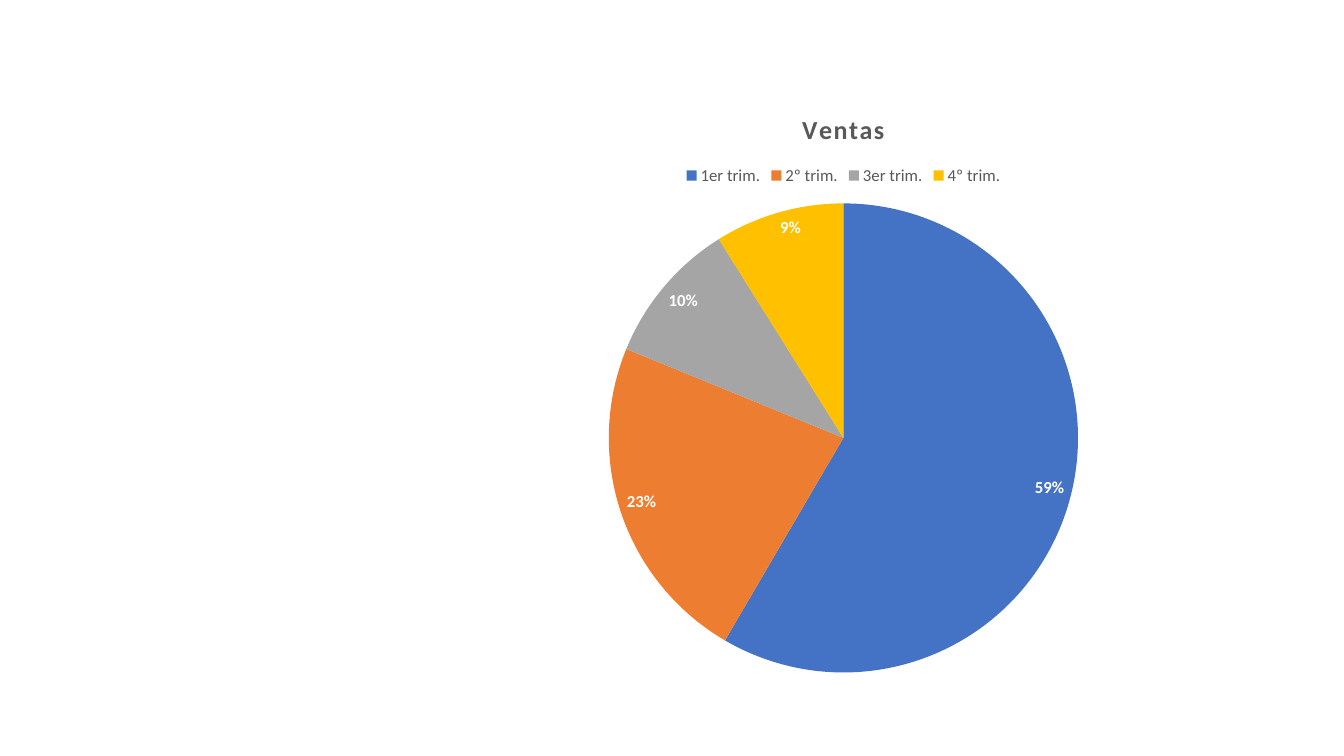
from pptx import Presentation
from pptx.chart.data import CategoryChartData
from pptx.dml.color import RGBColor
from pptx.enum.chart import XL_CHART_TYPE, XL_LABEL_POSITION, XL_LEGEND_POSITION
from pptx.util import Inches, Pt

GREY_TEXT = RGBColor(0x59, 0x59, 0x59)
WHITE = RGBColor(0xFF, 0xFF, 0xFF)
BLUE = RGBColor(0x44, 0x72, 0xC4)
ORANGE = RGBColor(0xED, 0x7D, 0x31)
GREY = RGBColor(0xA5, 0xA5, 0xA5)
YELLOW = RGBColor(0xFF, 0xC0, 0x00)

QUARTERS = [
    ("1er trim.", 59, BLUE),
    ("2º trim.", 23, ORANGE),
    ("3er trim.", 10, GREY),
    ("4º trim.", 9, YELLOW),
]


def style_font(font, size, color, bold=False):
    font.name = "Calibri"
    font.size = Pt(size)
    font.color.rgb = color
    font.bold = bold


def add_sales_pie(page, left, top, width, height):
    names, shares, colors = zip(*QUARTERS)
    sales = CategoryChartData()
    sales.categories = names
    sales.add_series("Ventas", shares)
    chart = page.shapes.add_chart(
        XL_CHART_TYPE.PIE, left, top, width, height, sales
    ).chart
    style_font(chart.font, 10, GREY_TEXT)

    chart.has_title = True
    chart.chart_title.include_in_layout = False
    title = chart.chart_title.text_frame.paragraphs[0]
    span = title.add_run()
    span.text = "Ventas"
    style_font(span.font, 18.6, GREY_TEXT, bold=True)
    span.font._element.set("spc", "100")

    chart.has_legend = True
    chart.legend.position = XL_LEGEND_POSITION.TOP
    chart.legend.include_in_layout = False
    style_font(chart.legend.font, 12, GREY_TEXT)

    pie = chart.plots[0]
    pie.vary_by_categories = True
    for index, color in enumerate(colors):
        fill = pie.series[0].points[index].format.fill
        fill.solid()
        fill.fore_color.rgb = color

    pie.has_data_labels = True
    labels = pie.data_labels
    labels.show_value = True
    labels.number_format = '0"%"'
    labels.number_format_is_linked = False
    labels.position = XL_LABEL_POSITION.INSIDE_END
    style_font(labels.font, 12, WHITE, bold=True)


def main():
    deck = Presentation()
    deck.slide_width = Inches(13.33)
    deck.slide_height = Inches(7.5)
    page = deck.slides.add_slide(deck.slide_layouts[6])
    add_sales_pie(page, Inches(3.92), Inches(0.88), Inches(8.89), Inches(5.93))
    deck.save("out.pptx")


if __name__ == "__main__":
    main()
